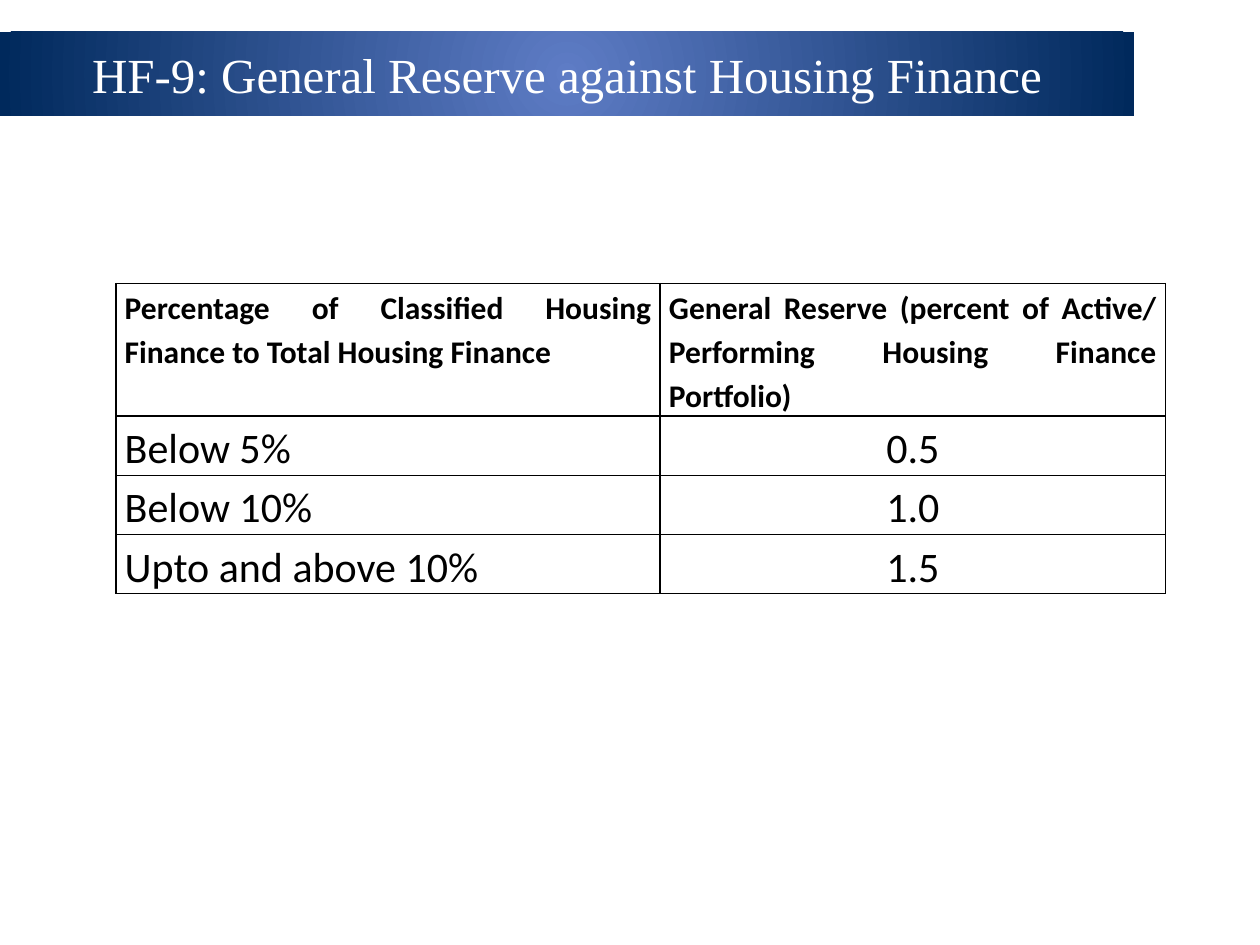
from lxml import etree
from pptx import Presentation
from pptx import util as u
from pptx.dml.color import RGBColor
from pptx.enum import text
from pptx.oxml import parse_xml
from pptx.oxml.ns import nsdecls, qn

# Content
TITLE = "HF-9: General Reserve against Housing Finance"
ROWS = [
    ("Percentage of Classified Housing Finance to Total Housing Finance",
     "General Reserve (percent of Active/ Performing Housing Finance Portfolio)"),
    ("Below 5%", "0.5"),
    ("Below 10%", "1.0"),
    ("Upto and above 10%", "1.5"),
]
COL_WIDTHS = [4.32, 4.01]
ROW_HEIGHTS = [1.05, 0.47, 0.47, 0.47]
BLACK, WHITE = "000000", "FFFFFF"
GRADIENT = ["5E7CC5", "00295C"]

# Formats
ALIGN = text.PP_ALIGN
TITLE_FONT = {"name": "Times New Roman", "size": u.Pt(28), "bold": False}
HEAD_FONT = {"name": "Calibri", "size": u.Pt(18), "bold": True}
BODY_FONT = {"name": "Calibri", "size": u.Pt(24), "bold": False}
CELL_MARGINS = {"margin_left": u.Inches(0.07), "margin_right": u.Inches(0.07),
                "margin_top": 0, "margin_bottom": 0}


def set_all(target, values):
    for name, value in values.items():
        setattr(target, name, value)


def set_color(color, hex_value):
    color.rgb = RGBColor.from_string(hex_value)


def write(tf, words, font, color, align, spacing=1.0):
    p = tf.paragraphs[0]
    p.alignment, p.line_spacing = align, spacing
    r = p.add_run()
    r.text = words
    set_all(r.font, font)
    set_color(r.font.color, color)


def add_borders(cell, color, width):
    tcPr = cell._tc.get_or_add_tcPr()
    for side in ("lnL", "lnR", "lnT", "lnB"):
        tcPr.append(parse_xml(
            f'<a:{side} {nsdecls("a")} w="{u.Pt(width)}"><a:solidFill>'
            f'<a:srgbClr val="{color}"/></a:solidFill></a:{side}>'))


prs = Presentation()
prs.slide_width, prs.slide_height = u.Inches(10), u.Inches(7.5)
s = prs.slides.add_slide(prs.slide_layouts[5])

# Title band with a radial gradient
title = s.shapes.title
set_all(title, {"left": 0, "top": u.Inches(0.25),
                "width": u.Inches(9), "height": u.Inches(0.67)})
title.fill.gradient()
for stop, position, color in zip(title.fill.gradient_stops, (0, 1), GRADIENT):
    stop.position = position
    set_color(stop.color, color)
grad = title.fill._xPr.find(qn("a:gradFill"))
grad.remove(grad.find(qn("a:lin")))
radial = etree.SubElement(grad, qn("a:path"), {"path": "circle"})
etree.SubElement(radial, qn("a:fillToRect"), dict.fromkeys("ltrb", "50000"))
tf = title.text_frame
set_all(tf, {"word_wrap": True, "auto_size": text.MSO_AUTO_SIZE.NONE,
             "vertical_anchor": text.MSO_ANCHOR.MIDDLE})
write(tf, TITLE, TITLE_FONT, WHITE, ALIGN.CENTER)

# Reserve table
table = s.shapes.add_table(
    len(ROWS), len(COL_WIDTHS), u.Inches(0.92), u.Inches(2.25),
    u.Inches(sum(COL_WIDTHS)), u.Inches(sum(ROW_HEIGHTS))).table
set_all(table, {"first_row": False, "horz_banding": False})
for column, width in zip(table.columns, COL_WIDTHS):
    column.width = u.Inches(width)
for row, height in zip(table.rows, ROW_HEIGHTS):
    row.height = u.Inches(height)
for i, row in enumerate(ROWS):
    for j, words in enumerate(row):
        cell = table.cell(i, j)
        set_all(cell, CELL_MARGINS)
        add_borders(cell, BLACK, 1)
        cell.fill.background()
        font = BODY_FONT if i else HEAD_FONT
        align = (ALIGN.LEFT, ALIGN.CENTER)[j] if i else ALIGN.JUSTIFY
        write(cell.text_frame, words, font, BLACK, align, 1.15)

prs.save("out.pptx")
